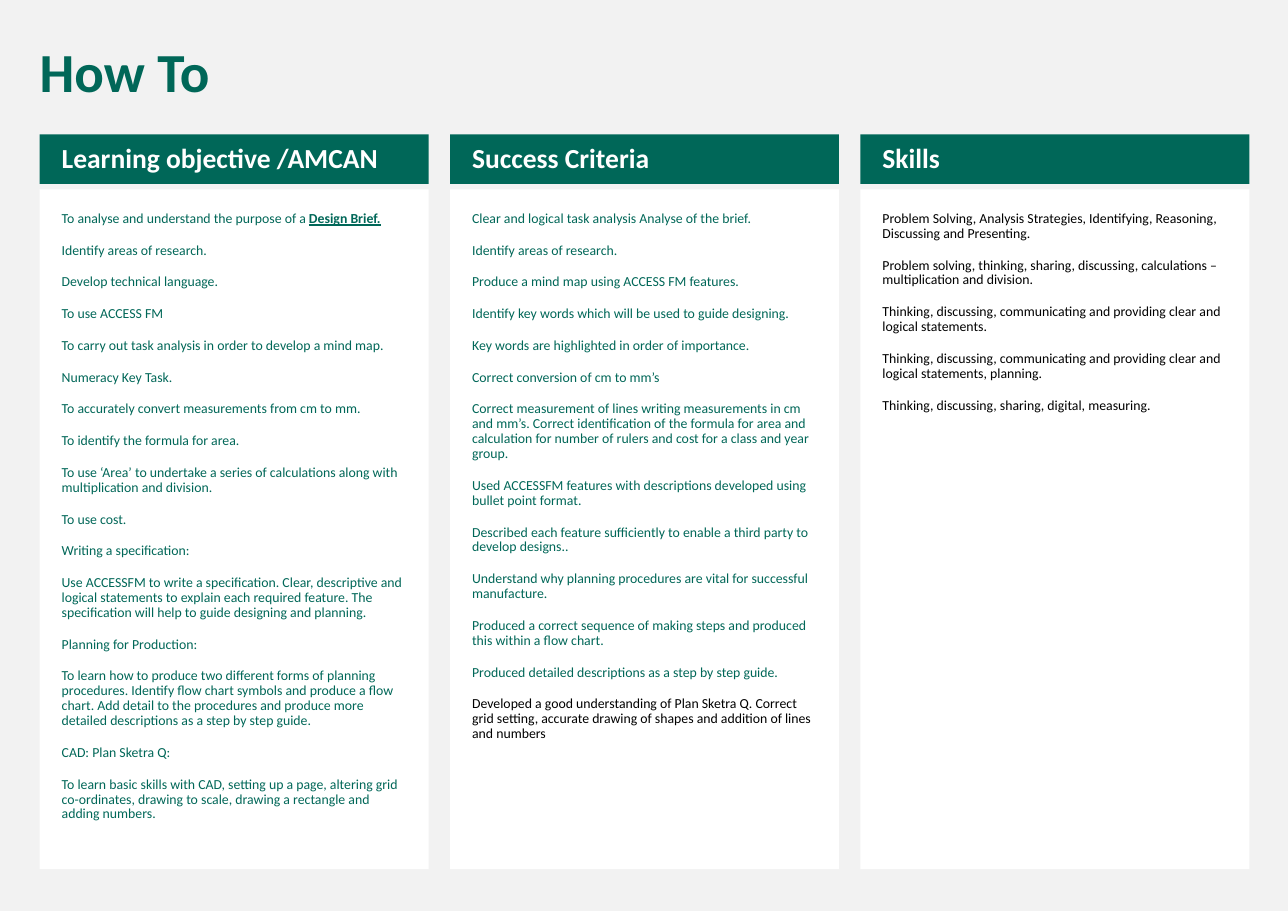
from pptx import Presentation
from pptx.dml.color import RGBColor
from pptx.enum.text import MSO_ANCHOR, MSO_AUTO_SIZE, PP_ALIGN
from pptx.oxml.ns import qn
from pptx.util import Inches, Pt
from lxml.etree import SubElement

COLORS = {
    "page": "F2F2F2",
    "green": "006758",
    "white": "FFFFFF",
    "black": "000000",
}
FONT = "Calibri"

# Column grid, in inches
LEFT, SPAN, COL_W = 0.36, 10.98, 3.53
GAP = (SPAN - 3 * COL_W) / 2
HEAD_TOP, HEAD_H = 1.22, 0.45
BODY_TOP, BODY_H = 1.72, 6.17
HEAD_INSETS = (0.2, 0.05, 0.1, 0.05)
BODY_INSETS = (0.2, 0.2, 0.2, 0.2)

# Each column: heading, green items, black items
COLUMNS = [
    ("Learning objective /AMCAN", [
        "To analyse and understand the purpose of a ",
        "Identify areas of research.",
        "Develop technical language.",
        "To use ACCESS FM",
        "To carry out task analysis in order to develop a mind map.",
        "Numeracy Key Task.",
        "To accurately convert measurements from cm to mm.",
        "To identify the formula for area.",
        "To use ‘Area’ to undertake a series of calculations along with "
        "multiplication and division.",
        "To use cost.",
        "Writing a specification:",
        "Use ACCESSFM to write a specification. Clear, descriptive and logical "
        "statements to explain each required feature. The specification will "
        "help to guide designing and planning.",
        "Planning for Production:",
        "To learn how to produce two different forms of planning procedures. "
        "Identify flow chart symbols and produce a flow chart. Add detail to "
        "the procedures and produce more detailed descriptions as a step by "
        "step guide.",
        "CAD: Plan Sketra Q:",
        "To learn basic skills with CAD, setting up a page, altering grid "
        "co-ordinates, drawing to scale, drawing a rectangle and adding numbers.",
    ], []),
    ("Success Criteria", [
        "Clear and logical task analysis Analyse of the brief.",
        "Identify areas of research.",
        "Produce a mind map using ACCESS FM features.",
        "Identify key words which will be used to guide designing.",
        "Key words are highlighted in order of importance.",
        "Correct conversion of cm to mm’s",
        "Correct measurement of lines writing measurements in cm and mm’s. "
        "Correct identification of the formula for area and calculation for "
        "number of rulers and cost for a class and year group.",
        "Used ACCESSFM features with descriptions developed using bullet point "
        "format.",
        "Described each feature sufficiently to enable a third party to develop "
        "designs..",
        "Understand why planning procedures are vital for successful manufacture.",
        "Produced a correct sequence of making steps and produced this within a "
        "flow chart.",
        "Produced detailed descriptions as a step by step guide.",
    ], [
        "Developed a good understanding of Plan Sketra Q. Correct grid setting, "
        "accurate drawing of shapes and addition of lines and numbers",
    ]),
    ("Skills", [], [
        "Problem Solving, Analysis Strategies, Identifying, Reasoning, "
        "Discussing and Presenting.",
        "Problem solving, thinking, sharing, discussing, calculations – "
        "multiplication and division.",
        "Thinking, discussing, communicating and providing clear and logical "
        "statements.",
        "Thinking, discussing, communicating and providing clear and logical "
        "statements, planning.",
        "Thinking, discussing, sharing, digital, measuring.",
    ]),
]


def rgb(name):
    return RGBColor.from_string(COLORS[name])


def place(sp, left, top, width, height, insets, anchor=MSO_ANCHOR.TOP):
    sp.left, sp.top = Inches(left), Inches(top)
    sp.width, sp.height = Inches(width), Inches(height)
    tf = sp.text_frame
    tf.word_wrap = True
    tf.auto_size = MSO_AUTO_SIZE.NONE
    tf.vertical_anchor = anchor
    tf.margin_left, tf.margin_top, tf.margin_right, tf.margin_bottom = map(
        Inches, insets)


def fill(sp, color):
    sp.fill.solid()
    sp.fill.fore_color.rgb = rgb(color)


def format_paragraph(p, size, color, bold=False):
    p.alignment = PP_ALIGN.LEFT
    p.line_spacing = 0.9
    p.space_before = Pt(11)
    # Plain paragraph: no bullet, no hanging indent
    pPr = p._p.get_or_add_pPr()
    pPr.set("marL", "0")
    pPr.set("indent", "0")
    SubElement(pPr, qn("a:buNone"))
    for r in p.runs:
        r.font.name, r.font.size = FONT, Pt(size)
        r.font.bold = bold
        r.font.color.rgb = rgb(color)


def fill_title(sp):
    place(sp, 0.26, 0.36, 11.08, 0.65, (0.1, 0.05, 0.1, 0.05))
    sp.text_frame.text = "How To"
    format_paragraph(sp.text_frame.paragraphs[0], 36, "green", bold=True)


def fill_heading(sp, left, text):
    place(sp, left, HEAD_TOP, COL_W, HEAD_H, HEAD_INSETS, MSO_ANCHOR.MIDDLE)
    fill(sp, "green")
    sp.text_frame.text = text
    format_paragraph(sp.text_frame.paragraphs[0], 18, "white", bold=True)


def fill_list(sp, left, green_items, black_items):
    place(sp, left, BODY_TOP, COL_W, BODY_H, BODY_INSETS)
    fill(sp, "white")
    tf = sp.text_frame
    tf.text = "\n".join(green_items + black_items)
    for i, p in enumerate(tf.paragraphs):
        format_paragraph(p, 9, "green" if i < len(green_items) else "black")


def add_key_term(p, text):
    r = p.add_run()
    r.text = text
    r.font.name, r.font.size = FONT, Pt(9)
    r.font.bold = r.font.underline = True
    r.font.color.rgb = rgb("green")


def main():
    prs = Presentation()
    prs.slide_width, prs.slide_height = Inches(11.69), Inches(8.27)
    s = prs.slides.add_slide(prs.slide_layouts.get_by_name("Comparison"))
    s.background.fill.solid()
    s.background.fill.fore_color.rgb = rgb("page")

    # Title
    fill_title(s.shapes.title)

    # The layout holds two heading and list pairs; the third is added
    boxes = list(s.placeholders)[1:]
    boxes += [s.shapes.add_textbox(0, 0, 0, 0) for _ in range(2)]

    # Columns
    for i, (heading, green_items, black_items) in enumerate(COLUMNS):
        left = LEFT + i * (COL_W + GAP)
        fill_heading(boxes[2 * i], left, heading)
        fill_list(boxes[2 * i + 1], left, green_items, black_items)

    # Key term at the end of the first objective
    add_key_term(boxes[1].text_frame.paragraphs[0], "Design Brief.")

    prs.save("out.pptx")


if __name__ == "__main__":
    main()
